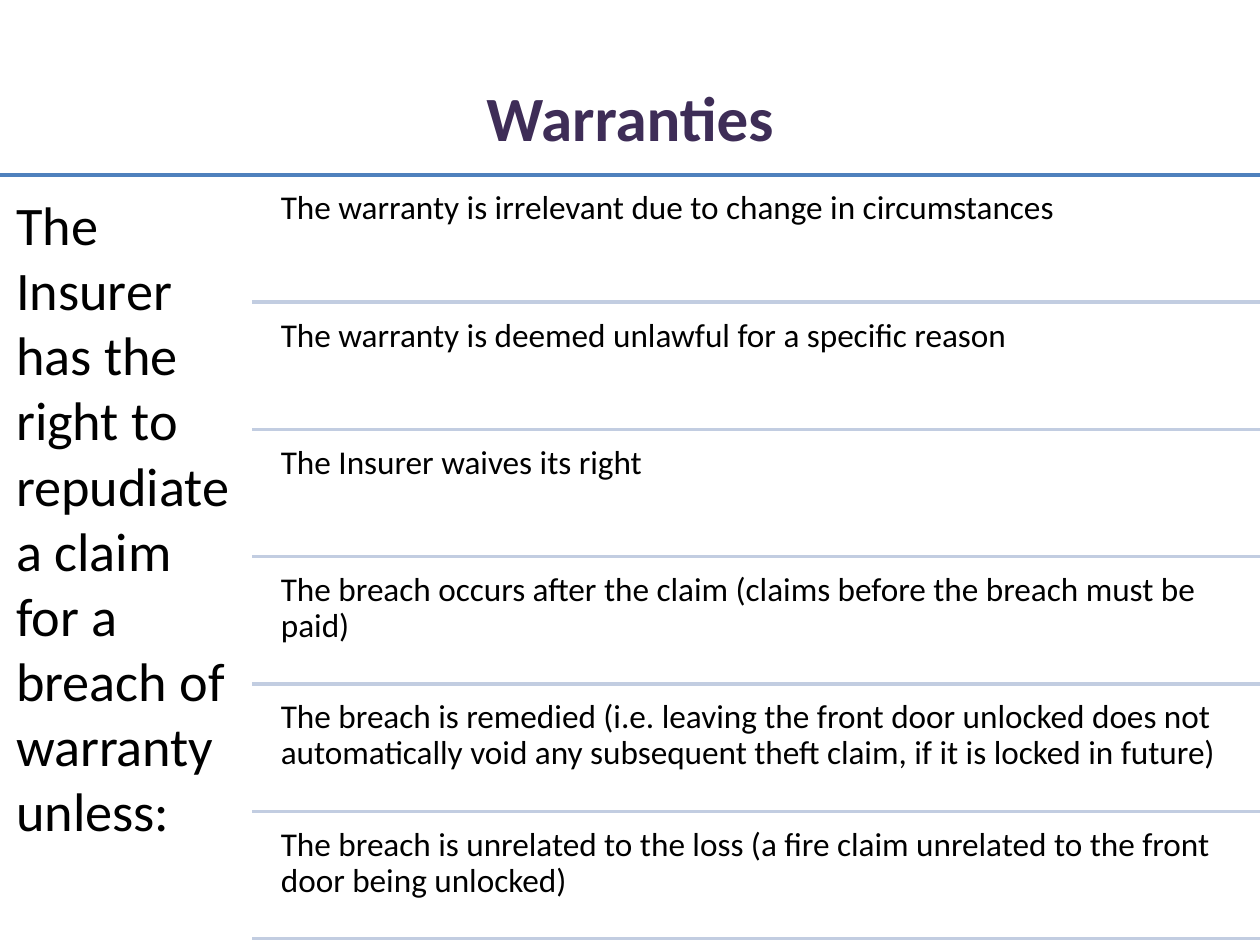
from dataclasses import dataclass

from lxml import etree
from pptx import Presentation
from pptx.dml.color import RGBColor
from pptx.enum import shapes, text
from pptx.oxml.ns import qn
from pptx.util import Pt


@dataclass(frozen=True)
class Theme:
    font: str = "Calibri"
    title: str = "3E2D57"
    body: str = "000000"
    rule: str = "4F81BD"
    divider: str = "C2CDE1"
    title_size: float = 36
    lead_size: float = 31
    item_size: float = 19
    line_width: float = 2


class Deck:
    def __init__(self, theme, width, height):
        self.theme = theme
        self.prs = Presentation()
        self.prs.slide_width = Pt(width)
        self.prs.slide_height = Pt(height)
        self.slide = None

    def add_slide(self):
        self.slide = self.prs.slides.add_slide(self.prs.slide_layouts[5])

    def style(self, p, size, color, bold=False):
        p.font.name = self.theme.font
        p.font.size = Pt(size)
        p.font.bold = bold
        p.font.color.rgb = RGBColor.from_string(color)

    def title(self, words, left, top, width, height):
        sp = self.slide.shapes.title
        sp.left, sp.top, sp.width, sp.height = map(Pt, (left, top, width, height))
        tf = sp.text_frame
        tf.text = words
        tf.vertical_anchor = text.MSO_ANCHOR.MIDDLE
        p = tf.paragraphs[0]
        p.alignment = text.PP_ALIGN.CENTER
        self.style(p, self.theme.title_size, self.theme.title, True)

    def text(self, words, left, top, width, height, size, inset, spacing=1.0):
        sp = self.slide.shapes.add_textbox(*map(Pt, (left, top, width, height)))
        tf = sp.text_frame
        tf.word_wrap = True
        tf.margin_left = tf.margin_right = Pt(inset)
        tf.margin_top = tf.margin_bottom = Pt(inset)
        p = tf.paragraphs[0]
        p.text = words
        p.line_spacing = spacing
        self.style(p, size, self.theme.body)

    def line(self, left, right, y, color):
        s = self.slide.shapes.add_connector(
            shapes.MSO_CONNECTOR.STRAIGHT, *map(Pt, (left, y, right, y)))
        s.line.color.rgb = RGBColor.from_string(color)
        s.line.width = Pt(self.theme.line_width)
        etree.SubElement(s._element.spPr, qn("a:effectLst"))


ITEMS = [
    "The warranty is irrelevant due to change in circumstances",
    "The warranty is deemed unlawful for a specific reason",
    "The Insurer waives its right",
    "The breach occurs after the claim (claims before the breach must be paid)",
    "The breach is remedied (i.e. leaving the front door unlocked does not "
    "automatically void any subsequent theft claim, if it is locked in future)",
    "The breach is unrelated to the loss (a fire claim unrelated to the front "
    "door being unlocked)",
]


def main():
    width, height = 720, 540
    top, lead_width = 100, 144
    gap, item_height = 3.6, 69.12
    item_left = 154.8
    theme = Theme()
    deck = Deck(theme, width, height)
    deck.add_slide()
    deck.title("Warranties", 36, 21.6, 648, 90)
    deck.line(0, width, top, theme.rule)
    deck.text("The Insurer has the right to repudiate a claim for a breach of "
              "warranty unless:", 0, top, lead_width, height - top,
              theme.lead_size, 9.3)
    for i, item in enumerate(ITEMS):
        y = top + gap + i * (gap + item_height)
        deck.text(item, item_left, y, width - item_left, item_height,
                  theme.item_size, 5.7, 0.9)
        deck.line(lead_width, width, y + item_height, theme.divider)
    deck.prs.save("out.pptx")


if __name__ == "__main__":
    main()
